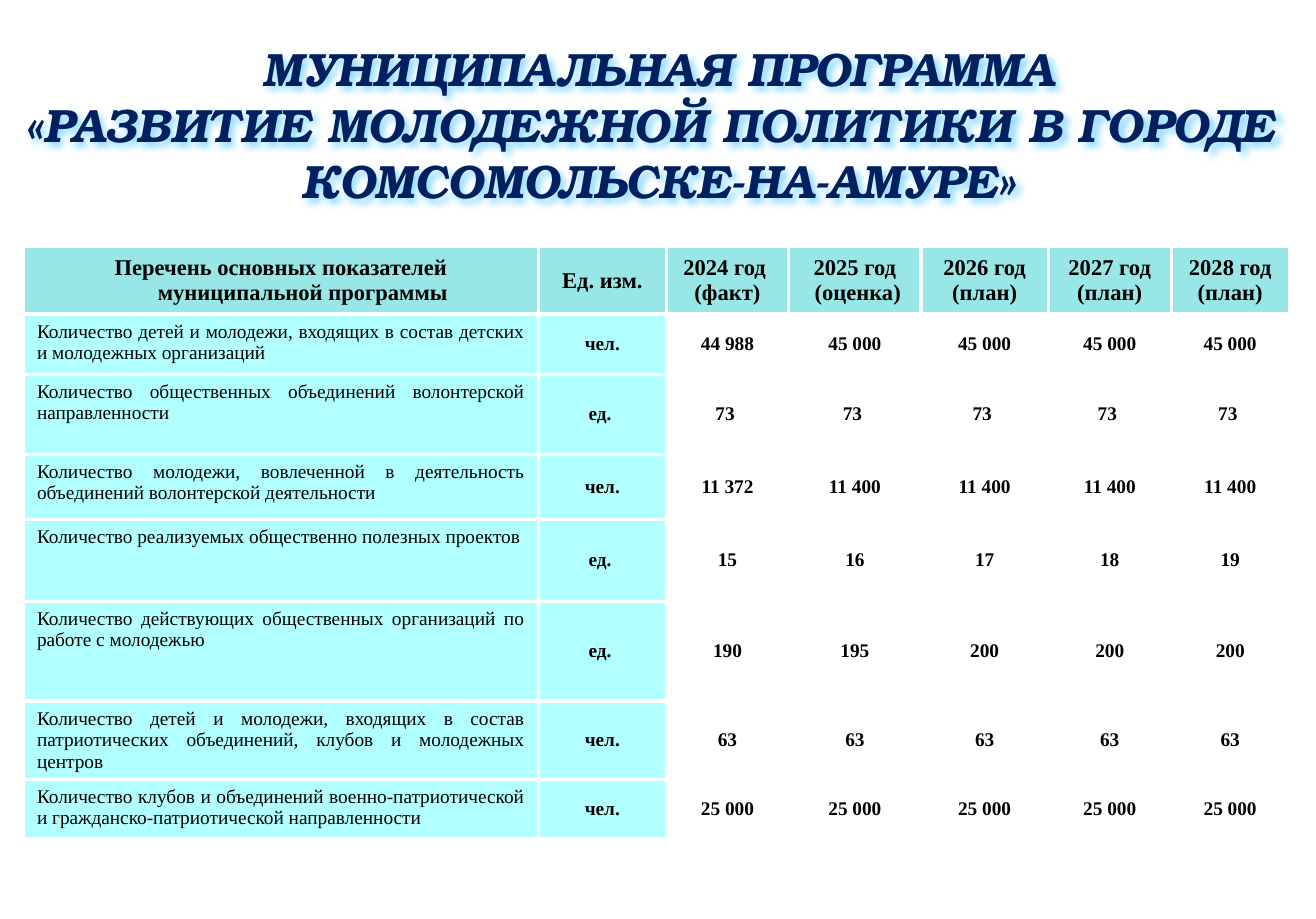
from lxml import etree
from pptx import Presentation
from pptx.dml.color import RGBColor
from pptx.enum import text
from pptx.oxml import ns
from pptx.util import Inches, Pt

# Content
TITLE = [
    "МУНИЦИПАЛЬНАЯ ПРОГРАММА",
    "«РАЗВИТИЕ МОЛОДЕЖНОЙ ПОЛИТИКИ В ГОРОДЕ ",
    "КОМСОМОЛЬСКЕ-НА-АМУРЕ»",
]
HEAD = [
    "Перечень основных показателей муниципальной программы",
    "Ед. изм.",
    "2024 год \n(факт)",
    "2025 год\n (оценка)",
    "2026 год (план)",
    "2027 год (план)",
    "2028 год (план)",
]
ROWS = [
    ("Количество детей и молодежи, входящих в состав детских и молодежных организаций",
     "чел.", "44 988", "45 000", "45 000", "45 000", "45 000"),
    ("Количество общественных объединений волонтерской направленности",
     "ед. ", "73 ", "73 ", "73 ", "73 ", "73 "),
    ("Количество молодежи, вовлеченной в деятельность объединений волонтерской деятельности",
     "чел.", "11 372", "11 400", "11 400", "11 400", "11 400"),
    ("Количество реализуемых общественно полезных проектов",
     "ед. ", "15", "16", "17", "18", "19"),
    ("Количество действующих общественных организаций по работе с молодежью",
     "ед. ", "190", "195", "200", "200", "200"),
    ("Количество детей и молодежи, входящих в состав патриотических объединений, "
     "клубов и молодежных центров",
     "чел.", "63", "63", "63", "63", "63"),
    ("Количество клубов и объединений военно-патриотической "
     "и гражданско-патриотической направленности",
     "чел.", "25 000", "25 000", "25 000", "25 000", "25 000"),
]
WIDTHS = [4.45, 1.1, 1.06, 1.14, 1.1, 1.06, 1.02]
HEIGHTS = [0.58, 0.52, 0.69, 0.56, 0.71, 0.86, 0.65, 0.51]

THEME = {
    "title font": "TeX Gyre Bonum", "body font": "Times New Roman",
    "title": "002060", "glow": "8FDBFF", "ink": "000000", "rule": "FFFFFF",
    "head fill": "99E6E6", "label fill": "B2FFFF",
    "title size": 29, "head size": 14, "body size": 12, "rule width": 2.25,
}
ALIGN = text.PP_ALIGN
ANCHOR = text.MSO_ANCHOR


def style(par, face, size, color, bold, slant=False):
    for run in par.runs:
        font = run.font
        font.name, font.size = face, Pt(size)
        font.bold, font.italic = bold, slant
        font.color.rgb = RGBColor.from_string(color)


def inset(box, side, top):
    box.margin_left = box.margin_right = Inches(side)
    box.margin_top = box.margin_bottom = Inches(top)


def hang(par, size):
    props = par._p.get_or_add_pPr()
    props.set("marL", str(Inches(size)))
    props.set("indent", str(-Inches(size)))


def frame(cell):
    props = cell._tc.get_or_add_tcPr()
    for spot, side in enumerate(("lnL", "lnR", "lnT", "lnB")):
        line = etree.Element(ns.qn("a:" + side), w=str(Pt(THEME["rule width"])))
        fill = etree.SubElement(line, ns.qn("a:solidFill"))
        etree.SubElement(fill, ns.qn("a:srgbClr"), val=THEME["rule"])
        props.insert(spot, line)


def fill_cell(cell, words, row, col):
    head, label = row == 0, row > 0 and col == 0
    cell.text_frame.text = words
    cell.vertical_anchor = ANCHOR.TOP if label else ANCHOR.MIDDLE
    inset(cell, *((0.12, 0.06) if label else (0.11, 0.07)))
    for par in cell.text_frame.paragraphs:
        par.alignment = ALIGN.JUSTIFY if label else ALIGN.CENTER
        if (head and col < 2) or (not head and col > 1):
            hang(par, 0.38)
        style(par, THEME["body font"], THEME["head size" if head else "body size"],
              THEME["ink"], not label)
    if head or col < 2:
        cell.fill.solid()
        tint = THEME["head fill" if head else "label fill"]
        cell.fill.fore_color.rgb = RGBColor.from_string(tint)
    else:
        cell.fill.background()
    frame(cell)


deck = Presentation()
deck.slide_width, deck.slide_height = Inches(11.36), Inches(7.93)
slide = deck.slides.add_slide(deck.slide_layouts[6])

# Table of indicators
grid = slide.shapes.add_table(
    len(HEIGHTS), len(WIDTHS), Inches(0.2), Inches(2.13),
    Inches(sum(WIDTHS)), Inches(sum(HEIGHTS))).table
grid.first_row = grid.horz_banding = False
for col, width in enumerate(WIDTHS):
    grid.columns[col].width = Inches(width)
for row, (height, line) in enumerate(zip(HEIGHTS, [HEAD, *ROWS])):
    grid.rows[row].height = Inches(height)
    for col, words in enumerate(line):
        fill_cell(grid.cell(row, col), words, row, col)

# Title
title = slide.shapes.add_textbox(Inches(0.09), Inches(0.34), Inches(11.19), Inches(1.57))
body = title.text_frame
body.word_wrap = True
body.vertical_anchor = ANCHOR.BOTTOM
inset(body, 0.12, 0.12)
body.text = "\n".join(TITLE)
for par in body.paragraphs:
    par.alignment = ALIGN.CENTER
    style(par, THEME["title font"], THEME["title size"], THEME["title"], True, True)

# Soft blue shadow behind the title
effect = etree.SubElement(title._element.spPr, ns.qn("a:effectLst"))
shade = etree.SubElement(effect, ns.qn("a:outerShdw"), blurRad=str(Pt(4)),
                         dist=str(Pt(3)), dir="2700000", algn="tl", rotWithShape="0")
etree.SubElement(shade, ns.qn("a:srgbClr"), val=THEME["glow"])

deck.save("out.pptx")
